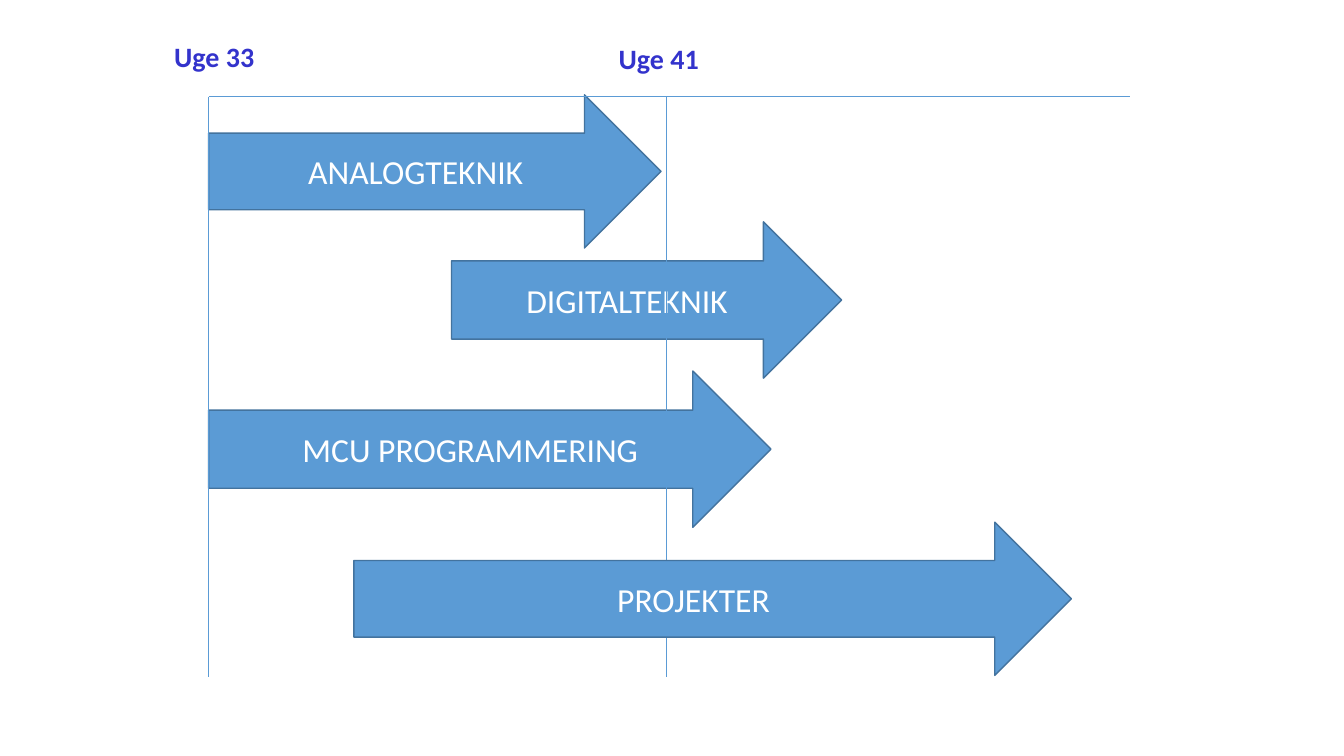
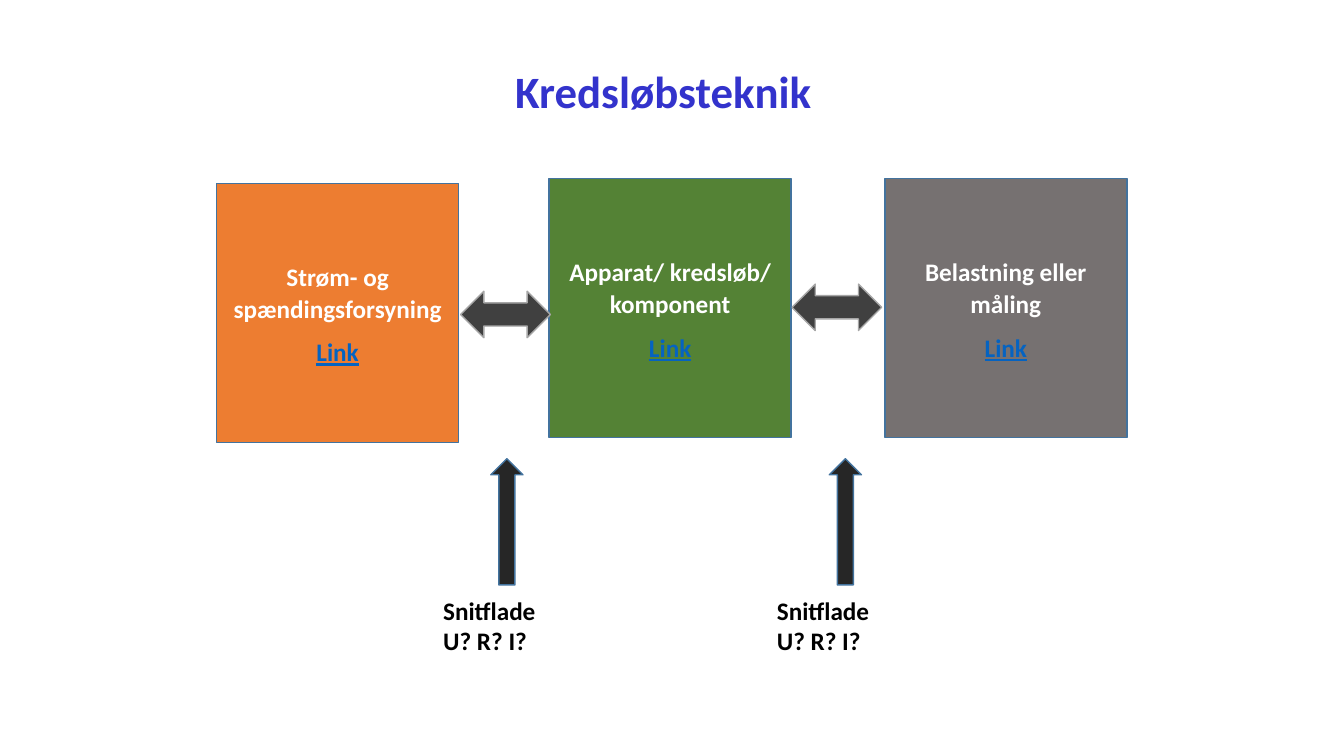
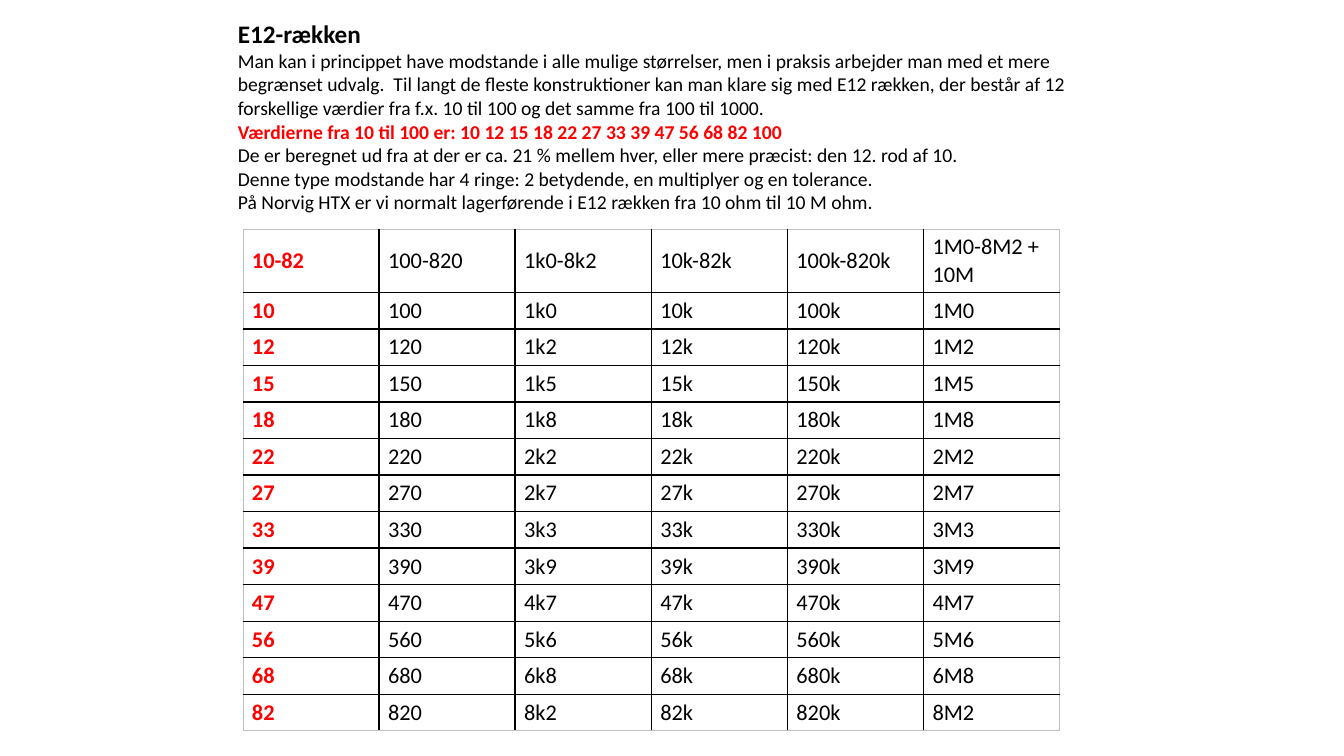
from lxml.etree import SubElement
from pptx import Presentation
from pptx.dml.color import RGBColor
from pptx.enum.shapes import MSO_CONNECTOR, MSO_SHAPE
from pptx.enum.text import MSO_ANCHOR, MSO_AUTO_SIZE, PP_ALIGN
from pptx.oxml.ns import qn
from pptx.util import Cm, Pt

COLORS = {
    "heading": "3333CC", "text": "000000", "white": "FFFFFF", "red": "FF0000",
    "link": "0563C1", "blue": "5B9BD5", "outline": "43739E", "orange": "ED7D31",
    "green": "548235", "gray": "767171", "exchange": "404040",
    "exchange_edge": "A6A6A6", "pointer": "262626", "table_edge": "BFBFBF",
}
FONT = "Calibri"
STYLES = {
    "title": ("heading", {"size": Pt(32), "bold": True}),
    "week": ("heading", {"size": Pt(20), "bold": True}),
    "course": ("white", {"size": Pt(24), "bold": False}),
    "stage": ("white", {"size": Pt(18), "bold": True}),
    "link": ("link", {"size": Pt(18), "bold": True, "underline": True}),
    "label": ("text", {"size": Pt(18), "bold": True}),
    "body": ("text", {"size": Pt(14), "bold": False}),
    "body_key": ("red", {"size": Pt(14), "bold": True}),
    "cell": ("text", {"size": Pt(16), "bold": False}),
    "cell_key": ("red", {"size": Pt(16), "bold": True}),
}
LAYOUTS = {"title_body": 1, "title": 5, "blank": 6}


def rgb(name):
    return RGBColor.from_string(COLORS[name])


def set_all(target, values):
    for attribute, value in values.items():
        setattr(target, attribute, value)


def write(frame, lines, **paragraph_format):
    """Fill a text frame with (text, style name) paragraphs."""
    for index, (text, style) in enumerate(lines):
        paragraph = frame.add_paragraph() if index else frame.paragraphs[0]
        set_all(paragraph, paragraph_format)
        run = paragraph.add_run()
        run.text = text
        color, font_format = STYLES[style]
        set_all(run.font, {"name": FONT, **font_format})
        run.font.color.rgb = rgb(color)


def add_label(slide, left, top, width, height, lines):
    frame = slide.shapes.add_textbox(Cm(left), Cm(top), Cm(width), Cm(height)).text_frame
    frame.word_wrap = True
    write(frame, lines)


def add_block(slide, kind, left, top, width, height, fill, edge="outline"):
    block = slide.shapes.add_shape(kind, Cm(left), Cm(top), Cm(width), Cm(height))
    block.shadow.inherit = False
    block.fill.solid()
    block.fill.fore_color.rgb = rgb(fill)
    block.line.color.rgb = rgb(edge)
    block.line.width = Pt(1)
    block.text_frame.vertical_anchor = MSO_ANCHOR.MIDDLE
    return block


def add_rule(slide, x1, y1, x2, y2):
    rule = slide.shapes.add_connector(
        MSO_CONNECTOR.STRAIGHT, Cm(x1), Cm(y1), Cm(x2), Cm(y2))
    rule.line.color.rgb = rgb("blue")
    rule.line.width = Pt(0.5)
    SubElement(rule._element.spPr, qn("a:effectLst"))


def place(holder, left, top, width, height, lines, **frame_format):
    """Move a placeholder and fill it with left-aligned, unbulleted text."""
    set_all(holder, {"left": Cm(left), "top": Cm(top),
                     "width": Cm(width), "height": Cm(height)})
    frame = holder.text_frame
    set_all(frame, {"word_wrap": True, "auto_size": MSO_AUTO_SIZE.NONE,
                    "vertical_anchor": MSO_ANCHOR.TOP, **frame_format})
    write(frame, lines, alignment=PP_ALIGN.LEFT, space_before=Pt(0), line_spacing=1.0)
    for paragraph in frame.paragraphs:
        properties = paragraph._p.get_or_add_pPr()
        properties.set("marL", "0")
        properties.set("indent", "0")
        SubElement(properties, qn("a:buNone"))


def add_slide(deck, layout):
    return deck.slides.add_slide(deck.slide_layouts[LAYOUTS[layout]])


def course_timeline(slide, left, top, width, height):
    week_41 = 11.53
    courses = [
        ("ANALOGTEKNIK", 0, -0.05, 11.4, 3.86),
        ("MCU PROGRAMMERING", 0, 6.91, 14.17, 3.94),
        ("DIGITALTEKNIK", 6.12, 3.15, 9.83, 3.94),
        ("PROJEKTER", 3.66, 10.72, 18.08, 3.86),
    ]

    def add_course(name, x, y, length, thickness):
        arrow = add_block(slide, MSO_SHAPE.RIGHT_ARROW, left + x, top + y,
                          length, thickness, "blue")
        write(arrow.text_frame, [(name, "course")], alignment=PP_ALIGN.CENTER)

    for course in courses[:-1]:
        add_course(*course)
    for x in (0, week_41):
        add_rule(slide, left + x, top, left + x, top + height)
    add_rule(slide, left, top, left + width, top)
    for week, x, y in (("Uge 33", -1.12, -1.58), ("Uge 41", 10.08, -1.53)):
        add_label(slide, left + x, top + y, 3.02, 1.12, [(week, "week")])
    add_course(*courses[-1])


def circuit_diagram(slide, left, top):
    stages = [
        ("Apparat/ kredsløb/ komponent", "green", 8.38, 0),
        ("Strøm- og spændingsforsyning", "orange", 0, 0.12),
        ("Belastning eller måling", "gray", 16.84, 0),
    ]
    for name, fill, x, y in stages:
        stage = add_block(slide, MSO_SHAPE.RECTANGLE, left + x, top + y, 6.1, 6.53, fill)
        write(stage.text_frame, [(name, "stage"), ("Link", "link")],
              alignment=PP_ALIGN.CENTER, line_spacing=1.07, space_after=Pt(8))

    interfaces = [(6.15, 2.84, 6.91, 5.46), (14.5, 2.66, 15.44, 13.87)]
    for exchange_x, exchange_y, pointer_x, label_x in interfaces:
        add_block(slide, MSO_SHAPE.LEFT_RIGHT_ARROW, left + exchange_x,
                  top + exchange_y, 2.26, 1.17, "exchange", "exchange_edge")
        add_block(slide, MSO_SHAPE.UP_ARROW, left + pointer_x, top + 7.06,
                  0.81, 3.18, "pointer")
        add_label(slide, left + label_x, top + 10.38, 4.17, 1.8,
                  [("Snitflade", "label"), ("U? R? I?", "label")])


def set_borders(cell, edges):
    """Draw cell borders from a dict of edge tag to (colour, points)."""
    properties = cell._tc.get_or_add_tcPr()
    for index, (tag, (color, points)) in enumerate(edges.items()):
        line = SubElement(properties, qn(f"a:{tag}"), w=str(Pt(points)))
        SubElement(SubElement(line, qn("a:solidFill")), qn("a:srgbClr"), val=COLORS[color])
        properties.insert(index, line)


def resistor_table(slide, left, top, column_width, header_height, row_height):
    header = ["10-82", "100-820", "1k0-8k2", "10k-82k", "100k-820k", "1M0-8M2 + 10M"]
    series = [10, 12, 15, 18, 22, 27, 33, 39, 47, 56, 68, 82]
    rows = [header] + [
        [f"{v}", f"{v * 10}", f"{v // 10}k{v % 10}", f"{v}k", f"{v * 10}k",
         f"{v // 10}M{v % 10}"] for v in series]
    last_row, last_column = len(rows) - 1, len(header) - 1
    table = slide.shapes.add_table(
        len(rows), len(header), Cm(left), Cm(top), Cm(column_width * len(header)),
        Cm(header_height + row_height * len(series))).table
    set_all(table, {"first_row": False, "horz_banding": False})
    for column in table.columns:
        column.width = Cm(column_width)
    inner, outer = ("text", 1), ("table_edge", 0.5)
    for r, values in enumerate(rows):
        table.rows[r].height = Cm(row_height if r else header_height)
        for c, value in enumerate(values):
            cell = table.cell(r, c)
            set_all(cell, {"margin_left": Cm(0.23), "margin_right": Cm(0.23),
                           "margin_top": Cm(0.11), "margin_bottom": Cm(0.11),
                           "vertical_anchor": MSO_ANCHOR.MIDDLE})
            cell.fill.background()
            write(cell.text_frame, [(value, "cell" if c else "cell_key")])
            set_borders(cell, {"lnL": inner if c else outer,
                               "lnR": inner if c < last_column else outer,
                               "lnT": inner if r else outer,
                               "lnB": inner if r < last_row else outer})


def series_text(slide, left, top, width):
    place(slide.shapes.title, left, top, width, 0.9, [("E12-rækken", "label")],
          margin_bottom=0)
    place(slide.placeholders[1], left, top + 0.9, width, 4.3, [
        ("Man kan i princippet have modstande i alle mulige størrelser, men i praksis "
         "arbejder man med et mere begrænset udvalg.  Til langt de fleste konstruktioner "
         "kan man klare sig med E12 rækken, der består af 12 forskellige værdier fra "
         "f.x. 10 til 100 og det samme fra 100 til 1000.", "body"),
        ("Værdierne fra 10 til 100 er: 10 12 15 18 22 27 33 39 47 56 68 82 100", "body_key"),
        ("De er beregnet ud fra at der er ca. 21 % mellem hver, eller mere præcist: "
         "den 12. rod af 10.", "body"),
        ("Denne type modstande har 4 ringe: 2 betydende, en multiplyer og en tolerance.",
         "body"),
        ("På Norvig HTX er vi normalt lagerførende i E12 rækken fra 10 ohm til 10 M ohm.",
         "body"),
    ], margin_top=0)


def main():
    deck = Presentation()
    set_all(deck, {"slide_width": Cm(33.87), "slide_height": Cm(19.05)})

    course_timeline(add_slide(deck, "blank"), 5.26, 2.44, 23.21, 14.63)

    circuit = add_slide(deck, "title")
    place(circuit.shapes.title, 12.73, 1.47, 8.81, 1.63, [("Kredsløbsteknik", "title")])
    circuit_diagram(circuit, 5.46, 4.5)

    resistors = add_slide(deck, "title_body")
    series_text(resistors, 5.74, 0.33, 22.4)
    resistor_table(resistors, 6.12, 5.77, 3.43, 1.6, 0.92)

    deck.save("out.pptx")


if __name__ == "__main__":
    main()
